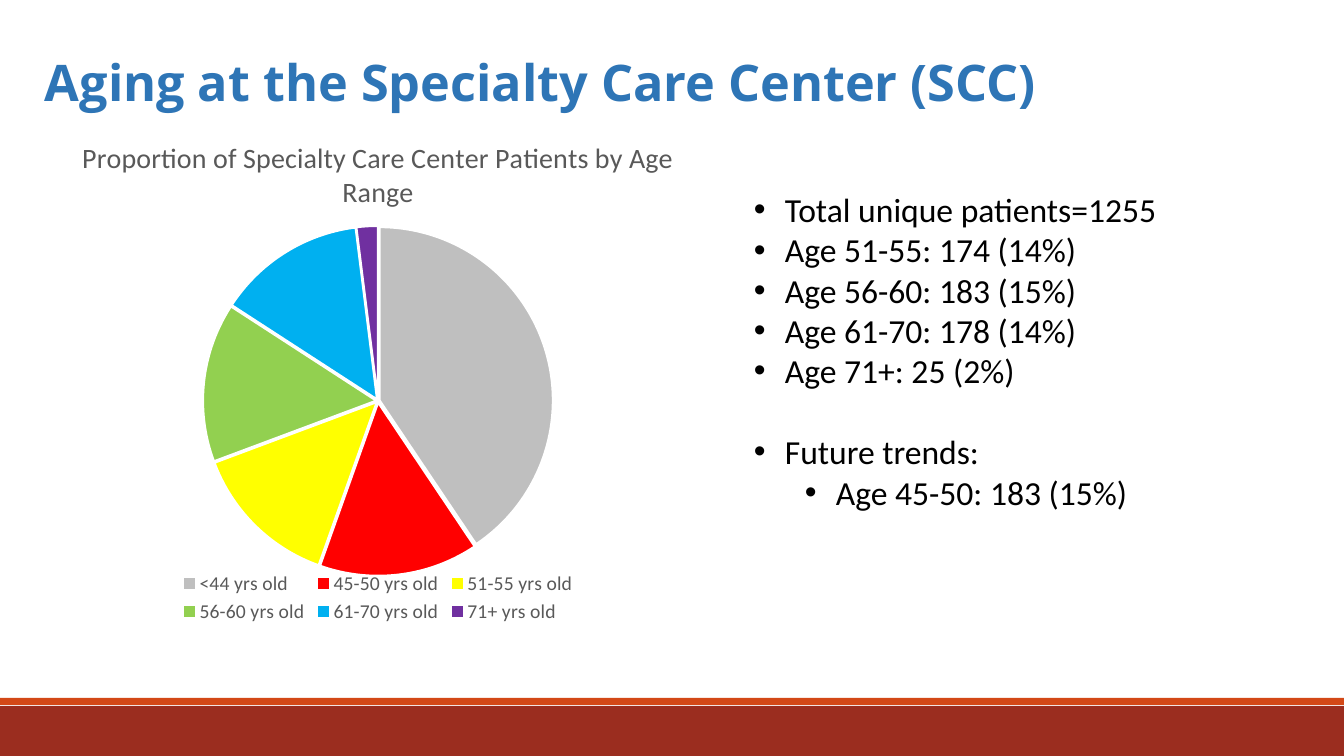
from lxml import etree
from pptx import Presentation
from pptx.chart.data import CategoryChartData
from pptx.dml.color import RGBColor
from pptx.enum.chart import XL_CHART_TYPE, XL_LEGEND_POSITION
from pptx.enum.shapes import MSO_SHAPE
from pptx.oxml import parse_xml
from pptx.oxml.ns import nsdecls, qn
from pptx.util import Pt

PIE = XL_CHART_TYPE.PIE
LEGEND_BOTTOM = XL_LEGEND_POSITION.BOTTOM
RECTANGLE = MSO_SHAPE.RECTANGLE

EMU_PER_PX = 914400 / 100.8
COLORS = {
    "heading": "2E75B6", "body": "000000", "chart_text": "595959",
    "band": "9B2D1F", "stripe": "D34817", "white": "FFFFFF",
    "grey": "BFBFBF", "red": "FF0000", "yellow": "FFFF00",
    "green": "92D050", "blue": "00B0F0", "purple": "7030A0",
}
HEADING_FONT, BODY_FONT = "Open Sans", "Calibri"

AGE_SHARES = [
    ("<44 yrs old", 41, "grey"),
    ("45-50 yrs old", 15, "red"),
    ("51-55 yrs old", 14, "yellow"),
    ("56-60 yrs old", 15, "green"),
    ("61-70 yrs old", 14, "blue"),
    ("71+ yrs old", 2, "purple"),
]
# text, indent level, space before in points
PATIENT_COUNTS = [
    ("Total unique patients=1255", 0, 0),
    ("Age 51-55: 174 (14%)", 0, 0),
    ("Age 56-60: 183 (15%)", 0, 0),
    ("Age 61-70: 178 (14%)", 0, 0),
    ("Age 71+: 25 (2%)", 0, 0),
    ("Future trends:", 0, 29),
    ("Age 45-50: 183 (15%)", 1, 0),
]


def px(length):
    return round(length * EMU_PER_PX)


def rgb(name):
    return RGBColor.from_string(COLORS[name])


class SlideBuilder:
    def __init__(self, slide):
        self.slide = slide

    def style(self, font, name, size, color, bold=False):
        font.name, font.size, font.bold = name, Pt(size), bold
        font.color.rgb = rgb(color)

    def bar(self, left, top, width, height, color):
        bar = self.slide.shapes.add_shape(RECTANGLE, *map(px, (left, top, width, height)))
        bar.shadow.inherit = False
        bar.fill.solid()
        bar.fill.fore_color.rgb = rgb(color)
        bar.line.fill.background()

    def frame(self, left, top, width, height, wrap):
        box = self.slide.shapes.add_textbox(*map(px, (left, top, width, height)))
        box.text_frame.word_wrap = wrap
        return box.text_frame

    def heading(self, left, top, width, height, text):
        run = self.frame(left, top, width, height, False).paragraphs[0].add_run()
        run.text = text
        self.style(run.font, HEADING_FONT, 36, "heading", bold=True)

    def bullets(self, left, top, width, height, items):
        frame = self.frame(left, top, width, height, True)
        for index, (text, level, space) in enumerate(items):
            paragraph = frame.add_paragraph() if index else frame.paragraphs[0]
            paragraph.level = level
            paragraph.space_before = Pt(space)
            properties = paragraph._p.get_or_add_pPr()
            properties.set("marL", str(px(31 + 51 * level)))
            properties.set("indent", str(px(-31)))
            etree.SubElement(properties, qn("a:buFont")).set("typeface", "Arial")
            etree.SubElement(properties, qn("a:buChar")).set("char", "•")
            run = paragraph.add_run()
            run.text = text
            self.style(run.font, BODY_FONT, 24, "body")

    def pie(self, left, top, width, height, title, shares, plot):
        data = CategoryChartData()
        data.categories = [label for label, _, _ in shares]
        data.add_series("Series 1", [value for _, value, _ in shares])
        chart = self.slide.shapes.add_chart(
            PIE, *map(px, (left, top, width, height)), data).chart
        self.style(chart.font, BODY_FONT, 10, "body")

        # Title and legend
        chart.has_title = True
        run = chart.chart_title.text_frame.paragraphs[0].add_run()
        run.text = title
        self.style(run.font, BODY_FONT, 20, "chart_text")
        chart.chart_title.include_in_layout = False
        chart.has_legend = True
        chart.legend.position = LEGEND_BOTTOM
        chart.legend.include_in_layout = False
        self.style(chart.legend.font, BODY_FONT, 14, "chart_text")

        # Slices, slightly pulled apart
        chart.plots[0].vary_by_categories = True
        series = chart.plots[0].series[0]
        for index, (_, _, color) in enumerate(shares):
            slice_format = series.points[index].format
            slice_format.fill.solid()
            slice_format.fill.fore_color.rgb = rgb(color)
            slice_format.line.color.rgb = rgb("white")
            slice_format.line.width = Pt(1.5)
        explosion = parse_xml(f'<c:explosion {nsdecls("c")} val="1"/>')
        series._element.find(qn("c:dPt")).addprevious(explosion)

        # Plot area as fractions of the chart
        plot_left, plot_top, side = plot
        fractions = {
            "x": (plot_left - left) / width, "y": (plot_top - top) / height,
            "w": side / width, "h": side / height,
        }
        sizes = "".join(f'<c:{key} val="{value:.4f}"/>' for key, value in fractions.items())
        layout = parse_xml(
            f'<c:layout {nsdecls("c")}><c:manualLayout><c:layoutTarget val="inner"/>'
            f'<c:xMode val="edge"/><c:yMode val="edge"/>{sizes}'
            '</c:manualLayout></c:layout>')
        plot_area = chart._chartSpace.chart.plotArea
        for old_layout in plot_area.findall(qn("c:layout")):
            plot_area.remove(old_layout)
        plot_area.insert(0, layout)


def main():
    deck = Presentation()
    deck.slide_width, deck.slide_height = px(1344), px(756)
    builder = SlideBuilder(deck.slides.add_slide(deck.slide_layouts[6]))

    # Footer bands
    builder.bar(0, 706, 1344, 50, "band")
    builder.bar(0, 698, 1344, 7, "stripe")

    # Heading, age chart and patient counts
    builder.heading(35, 46, 1065, 72, "Aging at the Specialty Care Center (SCC)")
    builder.pie(-29, 117, 814, 511,
                "Proportion of Specialty Care Center Patients by Age Range",
                AGE_SHARES, plot=(203, 226, 350))
    builder.bullets(744, 184, 542, 377, PATIENT_COUNTS)

    deck.save("out.pptx")


if __name__ == "__main__":
    main()
